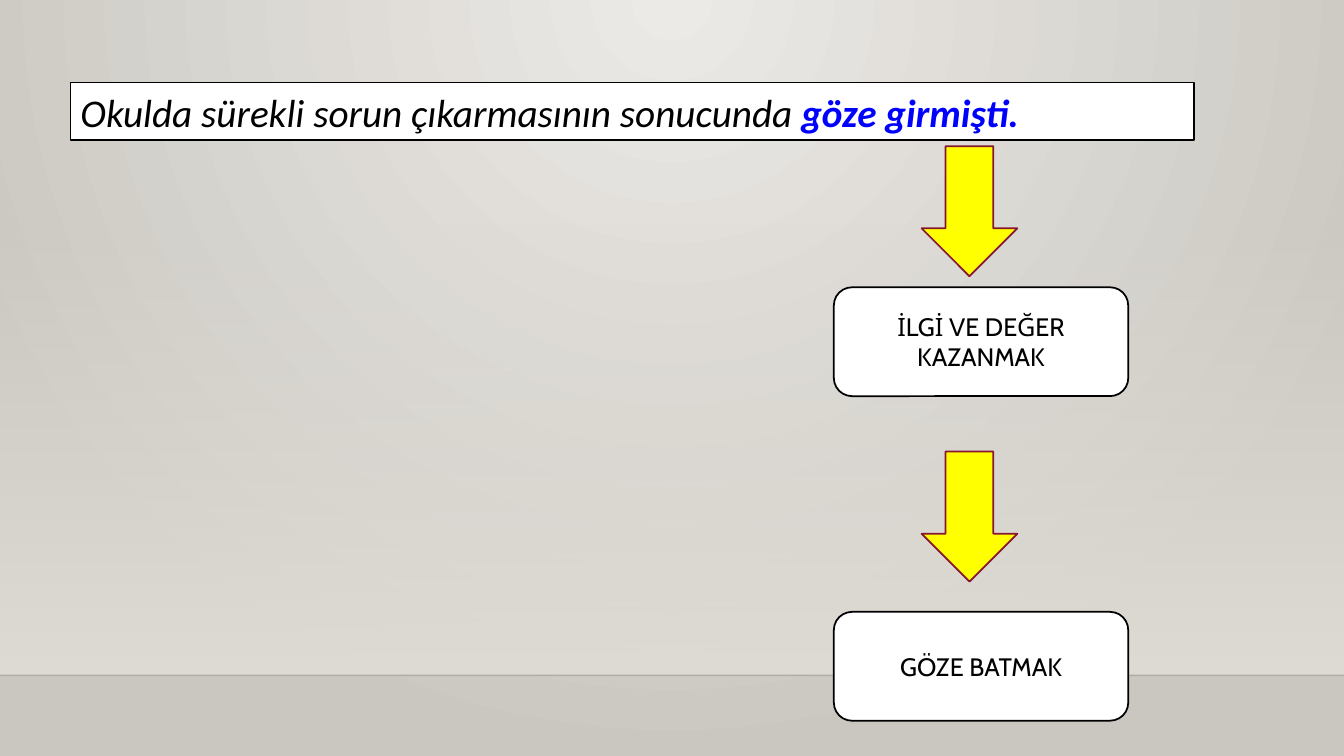
"""Build a slide that traces an idiom from its wrong use to the right one."""
from dataclasses import dataclass

from pptx import Presentation
from pptx import util as u
from pptx.dml.color import RGBColor
from pptx.enum import shapes, text
from pptx.oxml import parse_xml
from pptx.oxml.ns import nsdecls, qn


@dataclass
class Theme:
    glow: str = "ECEAE7"
    edge: str = "CAC7C1"
    wall: str = "DFDBD5"
    floor: str = "000001"
    ink: str = "000000"
    paper: str = "FFFFFF"
    stress: str = "0000FF"
    arrow: str = "FFFF00"
    rim: str = "871631"
    lead: int = 28
    body: int = 18
    rule: float = 1.25


def write(par, words, size, font, color, bold=False, italic=False):
    run = par.add_run()
    run.text = words
    run.font.size = u.Pt(size)
    run.font.name = font
    run.font.bold = bold
    run.font.italic = italic
    run.font.color.rgb = RGBColor.from_string(color)


def shade(props, first, last, alpha, way):
    grad = parse_xml(
        f'<a:gradFill {nsdecls("a")} rotWithShape="1"><a:gsLst>'
        f'<a:gs pos="0"><a:srgbClr val="{first}"><a:alpha val="{alpha}"/></a:srgbClr></a:gs>'
        f'<a:gs pos="100000"><a:srgbClr val="{last}"/></a:gs>'
        f'</a:gsLst>{way}</a:gradFill>')
    props.replace(props.find(qn("a:noFill")), grad)


look = Theme()
deck = Presentation()
deck.slide_width, deck.slide_height = u.Inches(13.33), u.Inches(7.5)
wide = deck.slide_width
slide = deck.slides.add_slide(deck.slide_layouts[6])
kinds = shapes.MSO_SHAPE

slide.background.fill.background()
shade(slide.element.find(".//" + qn("p:bgPr")), look.glow, look.edge, 100000,
      '<a:path path="circle"><a:fillToRect l="43000" t="0" r="43000" b="100000"/></a:path>')

top, base = u.Inches(2.21), u.Inches(6.7)
wall = slide.shapes.add_shape(kinds.RECTANGLE, 0, top, wide, base - top)
wall.shadow.inherit = False
wall.line.fill.background()
wall.fill.background()
shade(wall.element.spPr, look.wall, look.wall, 0, '<a:lin ang="5400000" scaled="0"/>')

floor = slide.shapes.add_connector(shapes.MSO_CONNECTOR.STRAIGHT, 0, base, wide, base)
floor.line.width = u.Pt(1)
floor.line.color.rgb = RGBColor.from_string(look.floor)
props = floor.element.spPr
props.find(".//" + qn("a:srgbClr")).append(parse_xml(f'<a:alpha {nsdecls("a")} val="20000"/>'))
props.append(parse_xml(f'<a:effectLst {nsdecls("a")}/>'))

lead = [("Okulda sürekli sorun çıkarmasının sonucunda ", look.ink, False),
        ("göze girmişti.", look.stress, True)]
arrow = (kinds.DOWN_ARROW, 9.14, 0.95, 1.29, look.arrow, look.rim)
card = (kinds.ROUNDED_RECTANGLE, 8.27, 2.92, 1.08, look.paper, look.ink)
strip = (kinds.RECTANGLE, 0.7, 11.14, 0.57, look.paper, look.ink)
parts = [(strip, 0.82, lead),
         (arrow, 1.45, []),
         (arrow, 4.48, []),
         (card, 2.85, [("İLGİ VE DEĞER KAZANMAK", look.ink, False)]),
         (card, 6.07, [("GÖZE BATMAK", look.ink, False)])]

for (kind, left, width, height, fill, line), y, runs in parts:
    box = slide.shapes.add_shape(kind, *map(u.Inches, (left, y, width, height)))
    box.shadow.inherit = False
    box.fill.solid()
    box.fill.fore_color.rgb = RGBColor.from_string(fill)
    box.line.color.rgb = RGBColor.from_string(line)
    box.line.width = u.Pt(look.rule)
    frame = box.text_frame
    frame.word_wrap = True
    frame.vertical_anchor = text.MSO_ANCHOR.MIDDLE
    par = frame.paragraphs[0]
    first = runs is lead
    par.alignment = text.PP_ALIGN.LEFT if first else text.PP_ALIGN.CENTER
    for words, color, bold in runs:
        write(par, words, size=look.lead if first else look.body,
              font="Calibri" if first else "Cabin", color=color, bold=bold, italic=first)

deck.save("out.pptx")
